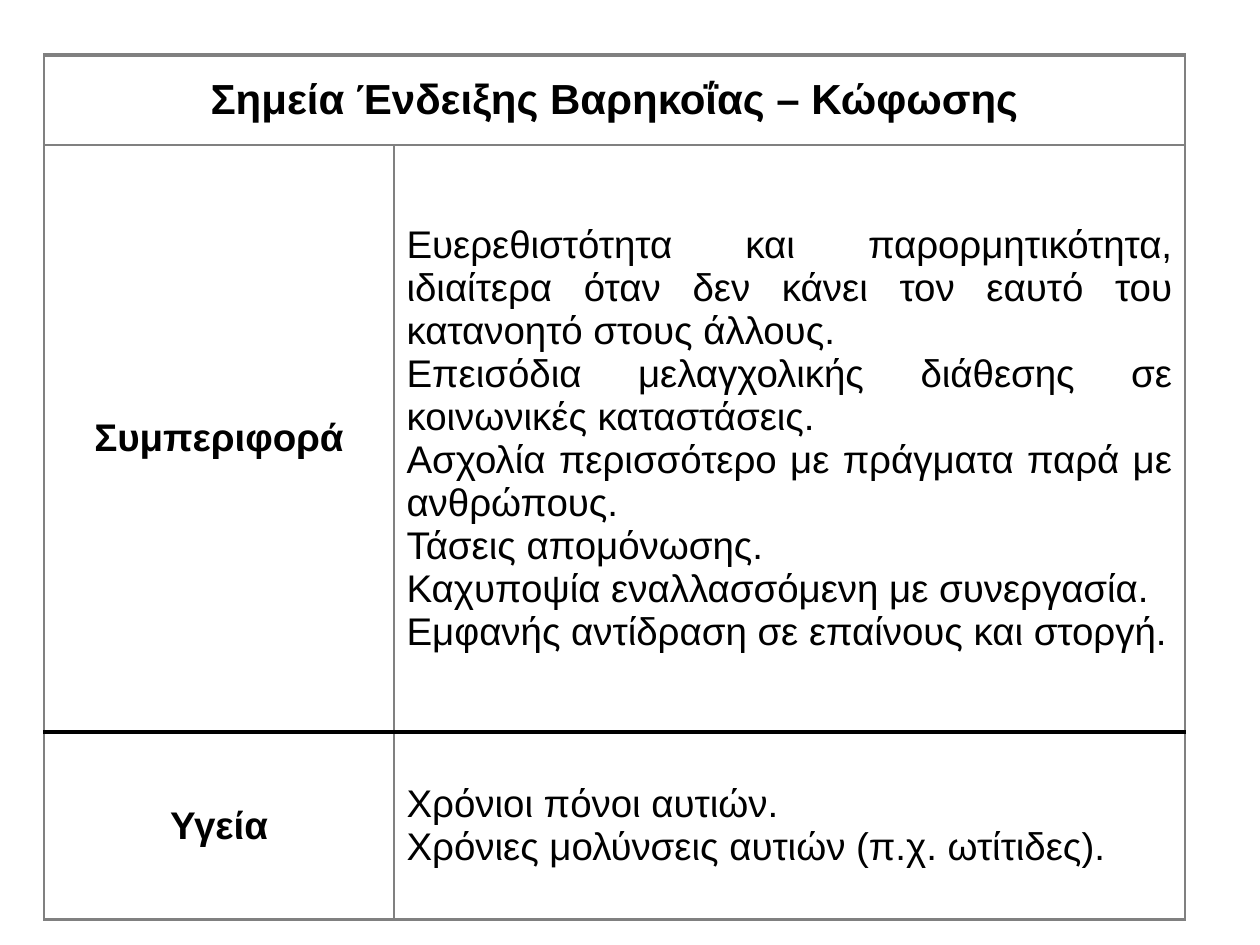
from lxml.etree import SubElement
from pptx import Presentation
from pptx.dml.color import RGBColor
from pptx.enum.text import MSO_VERTICAL_ANCHOR as Anchor, PP_PARAGRAPH_ALIGNMENT as Align
from pptx.oxml.ns import qn
from pptx.util import Emu, Pt

PX_PER_INCH = 126
BLACK = RGBColor(0x00, 0x00, 0x00)
GRAY = RGBColor(0x80, 0x80, 0x80)
COLUMN_WIDTHS = (350, 791)
ROW_HEIGHTS = (90, 587, 188)
RULES = ((GRAY, 2), (GRAY, 1), (BLACK, 2), (GRAY, 2))

TITLE = "Σημεία Ένδειξης Βαρηκοΐας – Κώφωσης"
SIGNS = {
    "Συμπεριφορά": (
        "Ευερεθιστότητα και παρορμητικότητα, ιδιαίτερα όταν δεν κάνει τον εαυτό του κατανοητό στους άλλους.",
        "Επεισόδια μελαγχολικής διάθεσης σε κοινωνικές καταστάσεις.",
        "Ασχολία περισσότερο με πράγματα παρά με ανθρώπους.",
        "Τάσεις απομόνωσης.",
        "Καχυποψία εναλλασσόμενη με συνεργασία.",
        "Εμφανής αντίδραση σε επαίνους και στοργή.",
    ),
    "Υγεία": (
        "Χρόνιοι πόνοι αυτιών.",
        "Χρόνιες μολύνσεις αυτιών (π.χ. ωτίτιδες).",
    ),
}


def px(length):
    """Turn pixels into EMU."""
    return Emu(round(length * 914400 / PX_PER_INCH))


def add_border(cell, side, color, width):
    """Draw one side of a cell."""
    line = SubElement(cell._tc.get_or_add_tcPr(), qn(f"a:ln{side}"), w=str(Pt(width)))
    SubElement(SubElement(line, qn("a:solidFill")), qn("a:srgbClr"), val=str(color))


def style_cell(cell, above, below):
    """Give a cell its borders, clear fill and middle anchor."""
    for side, rule in zip("LRTB", ((GRAY, 1), (GRAY, 1), above, below)):
        add_border(cell, side, *rule)
    cell.fill.background()
    cell.vertical_anchor = Anchor.MIDDLE


def write_cell(cell, lines, size, align, bold=False):
    """Fill a cell with one paragraph per line."""
    cell.text_frame.text = "\n".join(lines)
    for paragraph in cell.text_frame.paragraphs:
        paragraph.alignment = align
        for run in paragraph.runs:
            run.font.name = "Arial"
            run.font.size = Pt(size)
            run.font.bold = bold
            run.font.color.rgb = BLACK


def add_signs_table(slide):
    """Add the table of signs, grouped by area."""
    table = slide.shapes.add_table(
        len(ROW_HEIGHTS), len(COLUMN_WIDTHS),
        px(44), px(55), px(sum(COLUMN_WIDTHS)), px(sum(ROW_HEIGHTS)),
    ).table
    table.first_row = table.horz_banding = False
    for column, width in zip(table.columns, COLUMN_WIDTHS):
        column.width = px(width)
    for row, height, above, below in zip(table.rows, ROW_HEIGHTS, RULES, RULES[1:]):
        row.height = px(height)
        for cell in row.cells:
            style_cell(cell, above, below)

    heading = table.cell(0, 0)
    heading.merge(table.cell(0, 1))
    write_cell(heading, [TITLE], 24, Align.CENTER, bold=True)
    for index, (area, signs) in enumerate(SIGNS.items(), start=1):
        write_cell(table.cell(index, 0), [area], 22, Align.CENTER, bold=True)
        write_cell(table.cell(index, 1), signs, 22, Align.JUSTIFY)


def main():
    """Build and save the slide."""
    deck = Presentation()
    deck.slide_width, deck.slide_height = px(1260), px(945)
    slide = deck.slides.add_slide(deck.slide_layouts[6])
    add_signs_table(slide)
    deck.save("out.pptx")


if __name__ == "__main__":
    main()
